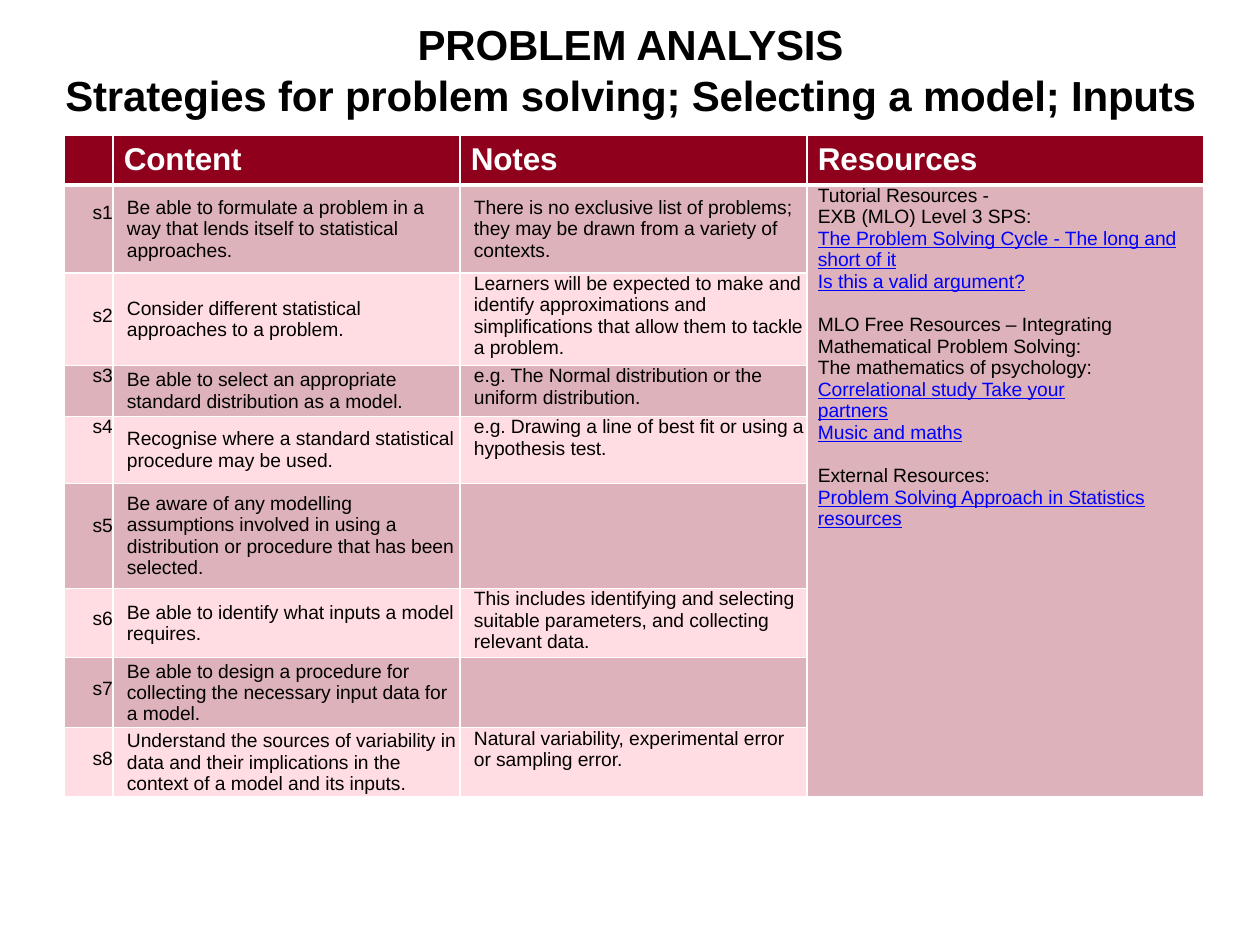
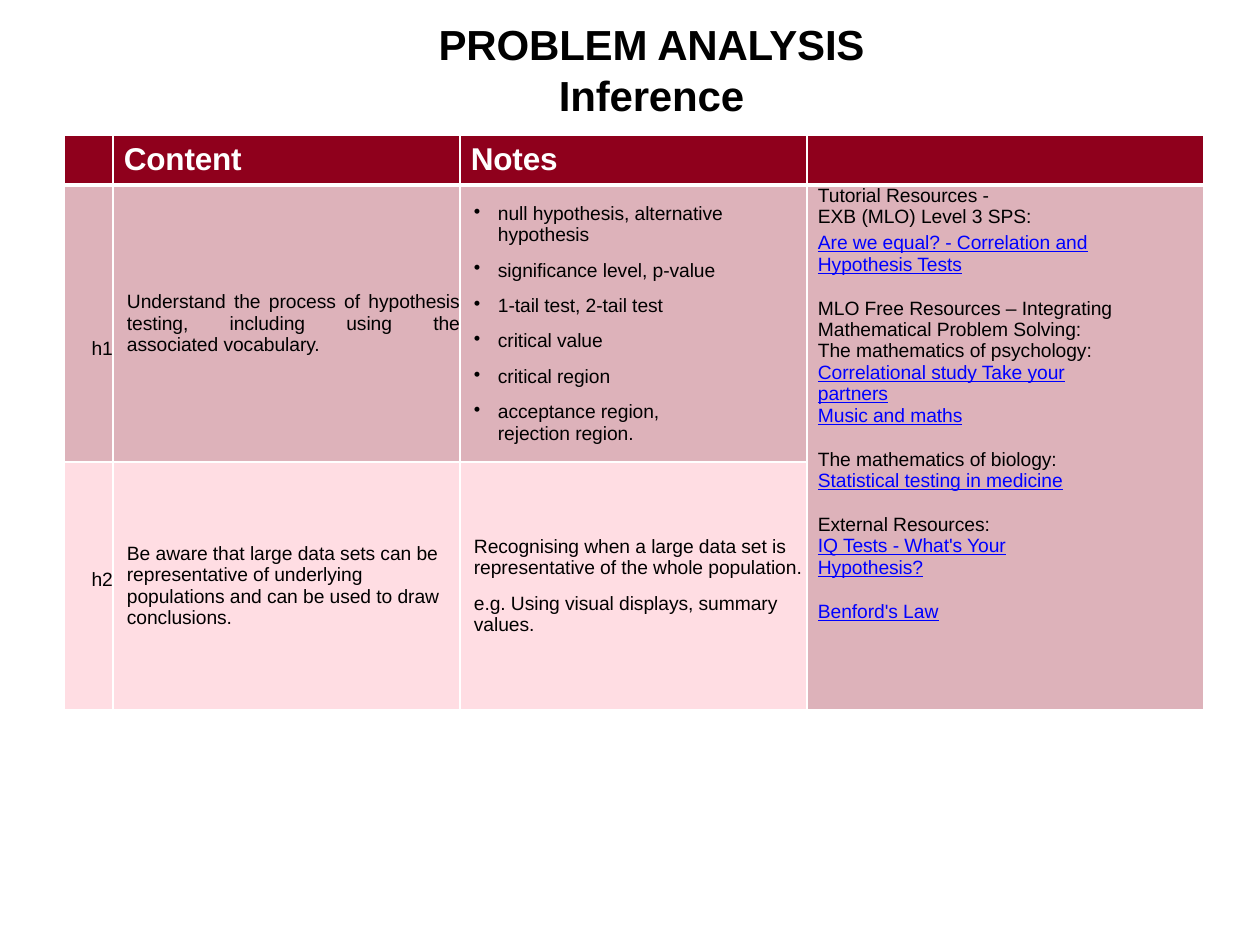
import copy

import pptx
import pptx.dml.color
import pptx.enum.text
import pptx.oxml
import pptx.oxml.ns
import pptx.util

ALIGN = pptx.enum.text.PP_ALIGN
ANCHOR = pptx.enum.text.MSO_ANCHOR
NBSP = chr(160)

# Shared palette and table grid (px)
BLACK, WHITE, CRIMSON, PALE, BLUE = "000000", "FFFFFF", "8F001C", "FFDDE3", "0000FF"
TINT = 30
TABLE_LEFT, TABLE_TOP, HEADER_HEIGHT = 64, 135, 50
COLUMN_WIDTHS = [49, 347, 347, 397]
BLANK_LINE = 12.8


def px(count):
    return pptx.util.Emu(round(count * 914400 / 126))


def colour(hex_code):
    return pptx.dml.color.RGBColor.from_string(hex_code)


def element(tag, **attributes):
    node = pptx.oxml.parse_xml(f"<a:{tag} {pptx.oxml.ns.nsdecls('a')}/>")
    for name, value in attributes.items():
        node.set(name, str(value))
    return node


def link(text, before=0):
    return text, {"color": BLUE, "underline": True, "before": before}


def after_gap(text, before=BLANK_LINE):
    return text, {"before": before}


def format_paragraph(para, text, size=11, color=BLACK, bold=False, underline=False,
                     align=ALIGN.LEFT, before=0, spacing=-5, bullet=False):
    """Fill one paragraph; a newline in the text is a line break."""
    para.alignment = align
    if bullet:
        properties = para._p.get_or_add_pPr()
        properties.set("marL", str(px(24)))
        properties.set("indent", str(-px(24)))
        properties.append(element("buChar", char="•"))
    if before:
        para.space_before = pptx.util.Pt(before)
    for number, part in enumerate(text.split("\n")):
        if number:
            para.add_line_break()
        span = para.add_run()
        span.text = part
        span.font.name = "Arial"
        span.font.size = pptx.util.Pt(size)
        span.font.bold = bold
        span.font.underline = underline
        span.font.color.rgb = colour(color)
        span._r.get_or_add_rPr().set("spc", str(spacing))
    # Line breaks take the text size too
    for line_break in para._p.findall(pptx.oxml.ns.qn("a:br")):
        line_break.insert(0, copy.deepcopy(span._r.rPr))


def write(frame, lines, **style):
    """Write lines, each a string or a (string, overrides) pair."""
    for number, line in enumerate(lines):
        text, changes = (line, {}) if isinstance(line, str) else line
        para = frame.paragraphs[0] if number == 0 else frame.add_paragraph()
        format_paragraph(para, text, **{**style, **changes})


class Builder:
    def __init__(self):
        self.deck = pptx.Presentation()
        self.deck.slide_width, self.deck.slide_height = px(1260), px(945)
        self.page = None

    def new_page(self):
        self.page = self.deck.slides.add_slide(self.deck.slide_layouts[6])

    def title(self, left, width, subtitle):
        box = self.page.shapes.add_textbox(px(left), px(19), px(width), px(102))
        frame = box.text_frame
        frame.word_wrap = True
        frame.margin_left = frame.margin_right = frame.margin_top = frame.margin_bottom = 0
        write(frame, ["PROBLEM ANALYSIS", subtitle], size=24, bold=True,
              align=ALIGN.CENTER, spacing=-10)

    def cell(self, cell, fill, alpha=None, top_width=1, bottom_width=1):
        """White borders, flat fill and no margins."""
        properties = cell._tc.get_or_add_tcPr()
        widths = {"lnL": 1, "lnR": 1, "lnT": top_width, "lnB": bottom_width}
        for side, width in widths.items():
            line = element(side, w=pptx.util.Pt(width))
            paint = element("solidFill")
            paint.append(element("srgbClr", val=WHITE))
            line.append(paint)
            properties.append(line)
        cell.fill.solid()
        cell.fill.fore_color.rgb = colour(fill)
        if alpha:
            swatch = properties.find(pptx.oxml.ns.qn("a:solidFill"))[0]
            swatch.append(element("alpha", val=alpha * 1000))
        cell.margin_left = cell.margin_right = cell.margin_top = cell.margin_bottom = 0

    def cell_text(self, cell, lines, left=14, top=0, anchor=ANCHOR.MIDDLE, **style):
        cell.margin_left, cell.margin_top = px(left), px(top)
        cell.vertical_anchor = anchor
        write(cell.text_frame, lines, **style)

    def content_table(self, headings, rows, resources):
        heights = [HEADER_HEIGHT] + [row["height"] for row in rows]
        frame = self.page.shapes.add_table(
            len(heights), len(COLUMN_WIDTHS), px(TABLE_LEFT), px(TABLE_TOP),
            px(sum(COLUMN_WIDTHS)), px(sum(heights)))
        table = frame.table
        table.horz_banding = False
        for column, width in zip(table.columns, COLUMN_WIDTHS):
            column.width = px(width)
        for row, height in zip(table.rows, heights):
            row.height = px(height)

        # Header row
        for number, heading in enumerate(headings):
            cell = table.cell(0, number)
            self.cell(cell, CRIMSON, bottom_width=3)
            if heading:
                self.cell_text(cell, [heading], left=11, size=18, bold=True,
                               color=WHITE, spacing=-10)

        # Body rows, tinted and pale in turn; the last column is one tinted cell
        for index, row in enumerate(rows, start=1):
            for number in range(len(COLUMN_WIDTHS)):
                tinted = index % 2 or number == 3
                self.cell(table.cell(index, number), CRIMSON if tinted else PALE,
                          TINT if tinted else None, top_width=3 if index == 1 else 1)
            self.cell_text(table.cell(index, 0), [row["label"]], left=0,
                           top=row["label_top"], anchor=ANCHOR.TOP, align=ALIGN.RIGHT)
            self.cell_text(table.cell(index, 1), [row["content"]],
                           align=row.get("align", ALIGN.LEFT))
            if "notes" in row:
                self.cell_text(table.cell(index, 2), row["notes"],
                               anchor=row.get("anchor", ANCHOR.TOP),
                               bullet=row.get("bullet", False))
        table.cell(1, 3).merge(table.cell(len(rows), 3))
        self.cell_text(table.cell(1, 3), resources, left=11, anchor=ANCHOR.TOP)


# Resources listed on both slides
PROVIDER = ["Tutorial Resources -", "EXB (MLO) Level 3 SPS:"]
PSYCHOLOGY = [
    after_gap("MLO Free Resources – Integrating\nMathematical Problem Solving:"),
    "The mathematics of psychology:",
    link("Correlational study Take your\npartners"),
    link("Music and maths"),
]
EXTERNAL = after_gap("External Resources:")

STRATEGY_ROWS = [
    {"label": "s1", "height": 88, "label_top": 17, "anchor": ANCHOR.MIDDLE,
     "content": "Be able to formulate a problem in a way that lends itself to statistical approaches.",
     "notes": ["There is no exclusive list of problems; they may be drawn from a variety of contexts."]},
    {"label": "s2", "height": 92, "label_top": 32,
     "content": "Consider different statistical\napproaches to a problem.",
     "notes": ["Learners will be expected to make and identify approximations and "
               "simplifications that allow them to tackle a problem."]},
    {"label": "s3", "height": 51, "label_top": 0,
     "content": "Be able to select an appropriate standard distribution as a model.",
     "notes": ["e.g. The Normal distribution or the uniform distribution."]},
    {"label": "s4", "height": 67, "label_top": 0,
     "content": "Recognise where a standard statistical procedure may be used.",
     "notes": ["e.g. Drawing a line of best fit or using a hypothesis test."]},
    {"label": "s5", "height": 105, "label_top": 32,
     "content": "Be aware of any modelling\nassumptions involved in using a "
                "distribution or procedure that has been selected."},
    {"label": "s6", "height": 69, "label_top": 20,
     "content": "Be able to identify what inputs a model requires.",
     "notes": ["This includes identifying and selecting suitable parameters, "
               "and collecting relevant data."]},
    {"label": "s7", "height": 70, "label_top": 20,
     "content": "Be able to design a procedure for collecting the necessary input data for\na model."},
    {"label": "s8", "height": 69, "label_top": 20,
     "content": "Understand the sources of variability in data and their implications in the "
                "context of a model and its inputs.",
     "notes": ["Natural variability, experimental error\nor sampling error."]},
]
STRATEGY_RESOURCES = PROVIDER + [
    link("The Problem Solving Cycle - The long and short of it"),
    link("Is this a valid argument?"),
] + PSYCHOLOGY + [
    EXTERNAL,
    link("Problem Solving Approach in Statistics resources"),
]

INFERENCE_ROWS = [
    {"label": "h1", "height": 277, "label_top": 153, "anchor": ANCHOR.MIDDLE,
     "align": ALIGN.JUSTIFY, "bullet": True,
     "content": "Understand the process of hypothesis testing, including using the "
                f"associated{NBSP}vocabulary.",
     "notes": ["null hypothesis, alternative hypothesis"] + [
         after_gap(term, 8) for term in (
             "significance level, p-value", "1-tail test, 2-tail test", "critical value",
             "critical region", "acceptance region,\nrejection region.")]},
    {"label": "h2", "height": 248, "label_top": 107, "anchor": ANCHOR.MIDDLE,
     "content": "Be aware that large data sets can be representative of underlying\n"
                "populations and can be used to draw conclusions.",
     "notes": ["Recognising when a large data set is representative of the whole population.",
               after_gap("e.g. Using visual displays, summary values.", 8)]},
]
INFERENCE_RESOURCES = PROVIDER + [
    link("Are we equal? - Correlation and\nHypothesis Tests", before=2.6),
] + PSYCHOLOGY + [
    after_gap("The mathematics of biology:"),
    link("Statistical testing in medicine"),
    EXTERNAL,
    link("IQ Tests - What's Your\nHypothesis?"),
    link("Benford's Law", before=BLANK_LINE),
]


def main():
    builder = Builder()

    # Slide 1: strategies, models and inputs
    builder.new_page()
    builder.title(53, 1155, "Strategies for problem solving; Selecting a model; Inputs")
    builder.content_table(["", "Content", "Notes", "Resources"],
                          STRATEGY_ROWS, STRATEGY_RESOURCES)

    # Slide 2: inference
    builder.new_page()
    builder.title(410, 483, "Inference")
    builder.content_table(["", "Content", "Notes", ""],
                          INFERENCE_ROWS, INFERENCE_RESOURCES)

    builder.deck.save("out.pptx")


if __name__ == "__main__":
    main()
